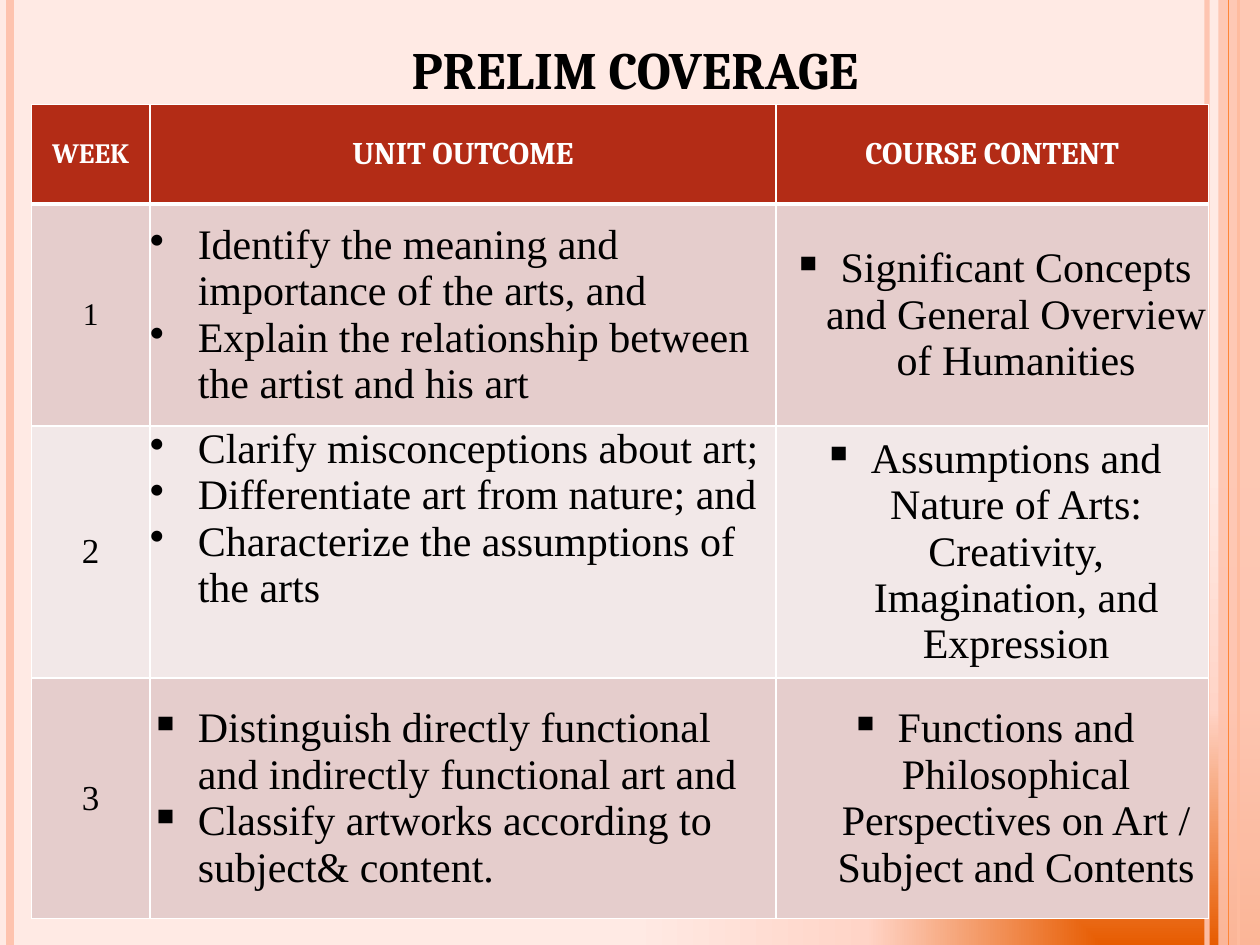
import dataclasses
import typing

import pptx
import pptx.dml.color
import pptx.enum.shapes
import pptx.enum.text
import pptx.oxml
import pptx.oxml.ns
import pptx.util

Inches = pptx.util.Inches
Pt = pptx.util.Pt
RGBColor = pptx.dml.color.RGBColor
Align = pptx.enum.text.PP_ALIGN
Anchor = pptx.enum.text.MSO_ANCHOR

BLACK = RGBColor(0x00, 0x00, 0x00)
WHITE = RGBColor(0xFF, 0xFF, 0xFF)
BRICK = RGBColor(0xB3, 0x2C, 0x16)
ROSE = RGBColor(0xE5, 0xCD, 0xCC)
PALE_ROSE = RGBColor(0xF2, 0xE8, 0xE8)
PEACH = RGBColor(0xFE, 0xC3, 0xAE)
ORANGE = RGBColor(0xFE, 0x86, 0x37)
BACKGROUND_STOPS = (
    (0, RGBColor(0xE7, 0x5C, 0x01)),
    (50, RGBColor(0xFF, 0xD4, 0xC7)),
    (100, RGBColor(0xFF, 0xEA, 0xE4)),
)

HEADING_FONT = "Cambria"
BODY_FONT = "Times New Roman"
NAMESPACE = pptx.oxml.ns.nsdecls("a")
COLUMN_WIDTHS = (0.94, 4.97, 3.43)
ROW_HEIGHTS = (0.79, 1.76, 1.96, 1.91)


@dataclasses.dataclass(frozen=True)
class Stripe:
    x: float
    weight: float
    color: RGBColor
    opacity: int = 100


@dataclasses.dataclass(frozen=True)
class Week:
    number: str
    number_size: int
    outcomes: tuple[str, ...]
    content: str
    fill: RGBColor
    bullet: str = "•"
    outcome_anchor: typing.Any = Anchor.MIDDLE


@dataclasses.dataclass(frozen=True)
class TextStyle:
    font: str
    size: int
    color: RGBColor
    bold: bool = False
    align: typing.Any = Align.CENTER
    bullet: str = ""
    tab: float = 0.19


STRIPES = (
    Stripe(9.58, 3, PEACH, 93),
    Stripe(0.08, 4.5, PEACH),
    Stripe(9.83, 1.5, ORANGE),
)
INNER_STRIPE = Stripe(9.75, 0.75, ORANGE)

HEADINGS = (("WEEK", 16), ("UNIT OUTCOME", 18), ("COURSE CONTENT", 18))
WEEKS = (
    Week("1", 18,
         ("Identify the meaning and importance of the arts, and",
          "Explain the relationship between the artist and his art"),
         "Significant Concepts and General Overview of Humanities", ROSE),
    Week("2", 20,
         ("Clarify misconceptions about art;",
          "Differentiate art from nature; and",
          "Characterize the assumptions of the arts"),
         "Assumptions and Nature of Arts: Creativity, Imagination, and Expression",
         PALE_ROSE, outcome_anchor=Anchor.TOP),
    Week("3", 20,
         ("Distinguish directly functional and indirectly functional art and",
          "Classify artworks according to subject& content."),
         "Functions and Philosophical Perspectives on Art / Subject and Contents",
         ROSE, bullet="▪"),
)


def set_background(page) -> None:
    stops = "".join(
        f'<a:gs pos="{position * 1000}"><a:srgbClr val="{color}"/></a:gs>'
        for position, color in BACKGROUND_STOPS
    )
    background = pptx.oxml.parse_xml(
        f'<p:bg {pptx.oxml.ns.nsdecls("p", "a")}><p:bgPr><a:gradFill rotWithShape="1">'
        f'<a:gsLst>{stops}</a:gsLst><a:path path="rect">'
        '<a:fillToRect l="100000" t="100000"/></a:path></a:gradFill>'
        '<a:effectLst/></p:bgPr></p:bg>'
    )
    page.element.cSld.insert(0, background)


def set_opacity(element, percent: int) -> None:
    if percent < 100:
        color = next(element.iter(pptx.oxml.ns.qn("a:srgbClr")))
        color.append(pptx.oxml.parse_xml(f'<a:alpha {NAMESPACE} val="{percent * 1000}"/>'))


def add_stripe(page, stripe: Stripe) -> None:
    line = page.shapes.add_connector(
        pptx.enum.shapes.MSO_CONNECTOR.STRAIGHT,
        Inches(stripe.x), Inches(0), Inches(stripe.x), Inches(7.5),
    )
    line.line.color.rgb = stripe.color
    line.line.width = Pt(stripe.weight)
    properties = line.element.spPr
    set_opacity(properties, stripe.opacity)
    properties.append(pptx.oxml.parse_xml(f"<a:effectLst {NAMESPACE}/>"))


def add_side_band(page) -> None:
    band = page.shapes.add_shape(
        pptx.enum.shapes.MSO_SHAPE.RECTANGLE,
        Inches(9.67), Inches(0), Inches(0.33), Inches(7.5),
    )
    band.shadow.inherit = False
    band.fill.solid()
    band.fill.fore_color.rgb = PEACH
    band.line.fill.background()
    set_opacity(band.element.spPr, 87)


def write_text(frame, texts: typing.Sequence[str], style: TextStyle) -> None:
    for index, text in enumerate(texts):
        para = frame.add_paragraph() if index else frame.paragraphs[0]
        para.text = text
        para.alignment = style.align
        if style.bullet:
            properties = para._p.get_or_add_pPr()
            properties.set("marL", str(Inches(0.38)))
            properties.set("indent", str(Inches(-0.38)))
            properties.append(pptx.oxml.parse_xml(
                f'<a:buChar {NAMESPACE} char="{style.bullet}"/>'))
            properties.append(pptx.oxml.parse_xml(
                f'<a:tabLst {NAMESPACE}><a:tab pos="{Inches(style.tab)}" algn="l"/></a:tabLst>'))
        para.font.name = style.font
        para.font.size = Pt(style.size)
        para.font.bold = style.bold
        para.font.color.rgb = style.color


def add_title(page) -> None:
    box = page.shapes.add_textbox(Inches(0.5), Inches(0.17), Inches(9.08), Inches(0.75))
    box.text_frame.word_wrap = True
    box.text_frame.vertical_anchor = Anchor.MIDDLE
    write_text(box.text_frame, ["PRELIM COVERAGE"], TextStyle(HEADING_FONT, 30, BLACK, True))


def fill_cell(cell, texts: typing.Sequence[str], style: TextStyle, fill: RGBColor,
              top: int = 1, bottom: int = 1, anchor=Anchor.MIDDLE) -> None:
    cell.vertical_anchor = anchor
    cell.fill.solid()
    cell.fill.fore_color.rgb = fill
    properties = cell._tc.get_or_add_tcPr()
    for index, (side, weight) in enumerate((("L", 1), ("R", 1), ("T", top), ("B", bottom))):
        properties.insert(index, pptx.oxml.parse_xml(
            f'<a:ln{side} {NAMESPACE} w="{Pt(weight)}"><a:solidFill>'
            f'<a:srgbClr val="{WHITE}"/></a:solidFill></a:ln{side}>'))
    write_text(cell.text_frame, texts, style)


def add_coverage_table(page) -> None:
    table = page.shapes.add_table(
        len(ROW_HEIGHTS), len(COLUMN_WIDTHS), Inches(0.25), Inches(0.83),
        Inches(sum(COLUMN_WIDTHS)), Inches(sum(ROW_HEIGHTS)),
    ).table
    for column, width in zip(table.columns, COLUMN_WIDTHS):
        column.width = Inches(width)
    for row, height in zip(table.rows, ROW_HEIGHTS):
        row.height = Inches(height)
    for column, (heading, size) in enumerate(HEADINGS):
        fill_cell(table.cell(0, column), [heading],
                  TextStyle(HEADING_FONT, size, WHITE, True), BRICK, bottom=3)
    for row, week in enumerate(WEEKS, 1):
        entries = (
            ([week.number], TextStyle(BODY_FONT, week.number_size, BLACK), Anchor.MIDDLE),
            (week.outcomes, TextStyle(BODY_FONT, 24, BLACK, align=Align.LEFT,
                                      bullet=week.bullet), week.outcome_anchor),
            ([week.content], TextStyle(BODY_FONT, 24, BLACK, bullet="▪", tab=0.13),
             Anchor.MIDDLE),
        )
        for column, (texts, style, anchor) in enumerate(entries):
            cell = table.cell(row, column)
            cell.margin_left = cell.margin_right = Inches(0)
            cell.margin_top = cell.margin_bottom = Inches(0)
            fill_cell(cell, texts, style, week.fill, top=3 if row == 1 else 1, anchor=anchor)


def main() -> None:
    deck = pptx.Presentation()
    deck.slide_width, deck.slide_height = Inches(10), Inches(7.5)
    page = deck.slides.add_slide(deck.slide_layouts[6])
    set_background(page)
    for stripe in STRIPES:
        add_stripe(page, stripe)
    add_side_band(page)
    add_stripe(page, INNER_STRIPE)
    add_title(page)
    add_coverage_table(page)
    deck.save("out.pptx")


if __name__ == "__main__":
    main()
